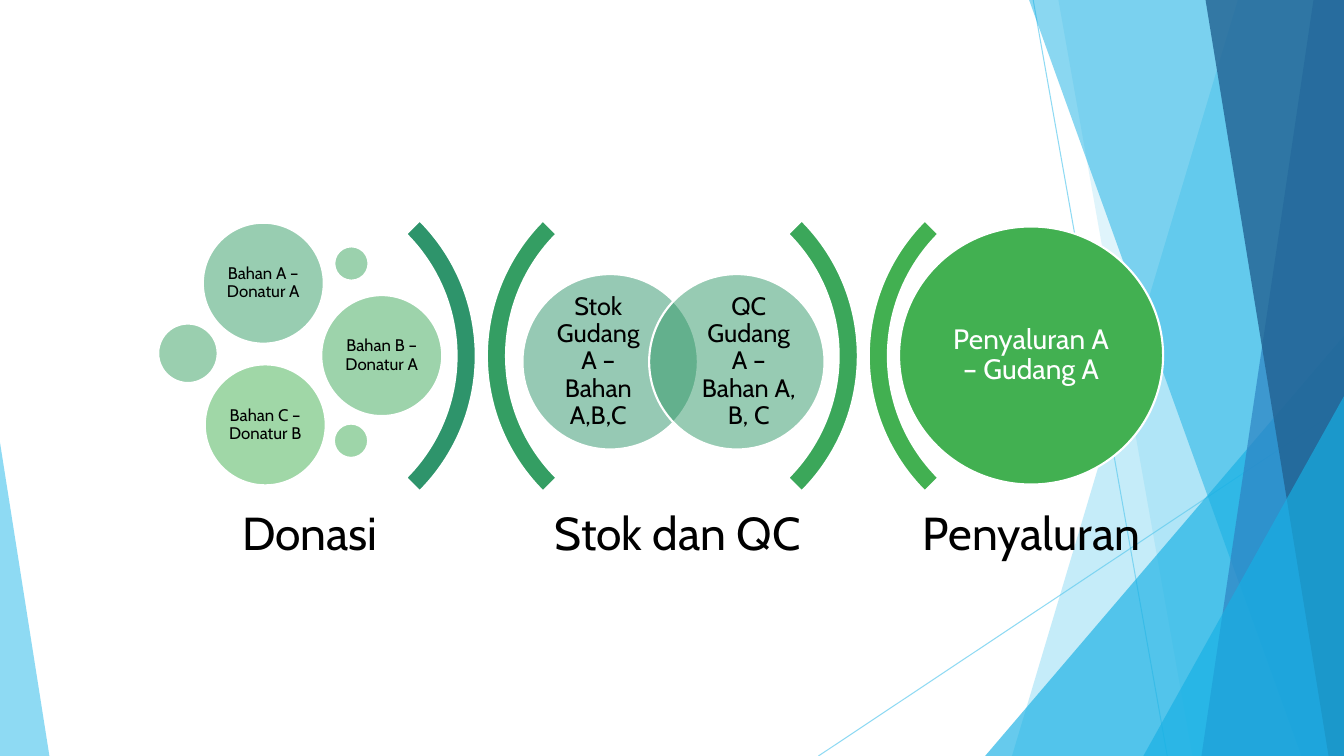
"""Build a slide showing the donation flow: Donasi, Stok dan QC, Penyaluran."""
from pptx import Presentation
from pptx.dml.color import RGBColor
from pptx.enum.shapes import MSO_CONNECTOR, MSO_SHAPE as SHAPE
from pptx.enum.text import MSO_ANCHOR, PP_ALIGN
from pptx.oxml.ns import qn
from pptx.util import Pt
from lxml.etree import SubElement

WIDTH, HEIGHT = 960, 540
FONT = "Cabin"
BLACK = RGBColor(0x00, 0x00, 0x00)
WHITE = RGBColor(0xFF, 0xFF, 0xFF)
SKY = RGBColor(0x5F, 0xCB, 0xEF)
CYAN = RGBColor(0x17, 0xB0, 0xE4)
BLUE = RGBColor(0x2E, 0x83, 0xC3)
NAVY = RGBColor(0x22, 0x62, 0x92)
GREENS = [RGBColor.from_string(c) for c in (
    "2E946B", "319868", "339C64", "349E63", "36A061",
    "39A45D", "3BA75A", "3CA859", "3FAC55", "42B051")]
(TEAL, TEAL_2, TEAL_3, JADE, JADE_2, JADE_3,
 LEAF, LEAF_2, LEAF_3, GREEN) = GREENS


class FlowSlide:
    """Hold the slide and its style, and draw each kind of element."""

    def __init__(self, slide):
        self.shapes = slide.shapes

    def set_alpha(self, sp, percent):
        color = sp.element.spPr.find(".//" + qn("a:srgbClr"))
        SubElement(color, qn("a:alpha"), val=str(percent * 1000))

    def paint(self, sp, color, alpha=100, outlined=False):
        sp.shadow.inherit = False
        sp.fill.solid()
        sp.fill.fore_color.rgb = color
        if alpha < 100:
            self.set_alpha(sp, alpha)
        if outlined:
            sp.line.color.rgb = WHITE
            sp.line.width = Pt(1.5)
        else:
            sp.line.fill.background()

    def label(self, sp, text, size, color, insets):
        tf = sp.text_frame
        tf.word_wrap = True
        tf.vertical_anchor = MSO_ANCHOR.MIDDLE
        tf.margin_left, tf.margin_top, tf.margin_right, tf.margin_bottom = map(Pt, insets)
        p = tf.paragraphs[0]
        p.text = text
        p.alignment = PP_ALIGN.CENTER
        p.line_spacing = 0.9
        font = p.runs[0].font
        font.name, font.size = FONT, Pt(size)
        font.color.rgb = color

    def line(self, x1, y1, x2, y2):
        sp = self.shapes.add_connector(MSO_CONNECTOR.STRAIGHT, Pt(x1), Pt(y1), Pt(x2), Pt(y2))
        sp.line.color.rgb = SKY
        sp.line.width = Pt(0.75)
        self.set_alpha(sp, 70)
        SubElement(sp.element.spPr, qn("a:effectLst"))

    def panel(self, top_x, bottom_x, color, alpha):
        builder = self.shapes.build_freeform(Pt(top_x), 0)
        corners = [(WIDTH, 0), (WIDTH, HEIGHT), (bottom_x, HEIGHT)]
        builder.add_line_segments([(Pt(x), Pt(y)) for x, y in corners], close=True)
        self.paint(builder.convert_to_shape(), color, alpha)

    def triangle(self, x, y, w, apex, color, alpha):
        sp = self.shapes.add_shape(SHAPE.ISOSCELES_TRIANGLE, Pt(x), Pt(y), Pt(w), Pt(HEIGHT - y))
        sp.adjustments[0] = apex
        self.paint(sp, color, alpha)

    def arc(self, x, rotation, color):
        size = Pt(273.6)
        sp = self.shapes.add_shape(SHAPE.BLOCK_ARC, Pt(x), Pt(117.4), size, size)
        for i, value in enumerate((135, 189, 0.05)):
            sp.adjustments[i] = value
        sp.rotation = rotation
        self.paint(sp, color, outlined=True)

    def circle(self, x, y, w, h, color, alpha=50, text=None, size=12,
               text_color=BLACK, insets=(3.6,) * 4):
        sp = self.shapes.add_shape(SHAPE.OVAL, Pt(x), Pt(y), Pt(w), Pt(h))
        self.paint(sp, color, alpha, outlined=True)
        if text:
            self.label(sp, text, size, text_color, insets)

    def caption(self, x, text):
        sp = self.shapes.add_textbox(Pt(x), Pt(355), Pt(208), Pt(54.7))
        self.label(sp, text, 33, BLACK, (10,) * 4)


def draw_backdrop(s):
    s.line(738, 0, 833.8, HEIGHT)
    s.line(WIDTH, 290.2, 584.6, HEIGHT)
    s.panel(884.2, 722.9, SKY, 36)
    s.panel(756, 851.8, SKY, 20)
    s.triangle(703.7, 239.8, 256.3, 1, CYAN, 66)
    s.panel(735.1, 929.5, CYAN, 50)
    s.panel(938.2, 858.2, BLUE, 70)
    s.panel(861.1, 949, NAVY, 80)
    s.triangle(816.7, 283, 143.3, 1, CYAN, 66)
    s.triangle(0, 316.1, 35.3, 0, SKY, 70)


def draw_flow(s):
    for x, rotation, color in [(66.2, 90, TEAL), (347.8, 270, JADE),
                               (339.1, 90, LEAF), (620.6, 270, GREEN)]:
        s.arc(x, rotation, color)

    for x, color, text, insets in [
            (373.2, TEAL, "Stok Gudang A – Bahan A,B,C", (0, 0, 17, 0)),
            (463.7, TEAL_2, "QC Gudang A – Bahan A, B, C", (17, 0, 0, 0))]:
        s.circle(x, 195.8, 125.3, 125.3, color, text=text, size=18, insets=insets)

    for x, y, d, color, text in [
            (144.9, 159.1, 86.4, TEAL_3, "Bahan A – Donatur A"),
            (113, 231.1, 42.5, JADE_2, None),
            (238.8, 176, 24.5, JADE_3, None),
            (229.5, 210.8, 86.4, LEAF_2, "Bahan B – Donatur A"),
            (238.5, 302.6, 24.5, LEAF_3, None),
            (146.3, 260.3, 86.4, GREEN, "Bahan C – Donatur B")]:
        s.circle(x, y, d, d, color, text=text)

    s.circle(642.2, 161.8, 188.6, 184.3, GREEN, 100, "Penyaluran A – Gudang A",
             20, WHITE, (5.8,) * 4)

    for x, text in [(117.4, "Donasi"), (380.2, "Stok dan QC"), (632.9, "Penyaluran")]:
        s.caption(x, text)


def main():
    prs = Presentation()
    prs.slide_width, prs.slide_height = Pt(WIDTH), Pt(HEIGHT)
    s = FlowSlide(prs.slides.add_slide(prs.slide_layouts[6]))
    draw_backdrop(s)
    draw_flow(s)
    prs.save("out.pptx")


if __name__ == "__main__":
    main()
